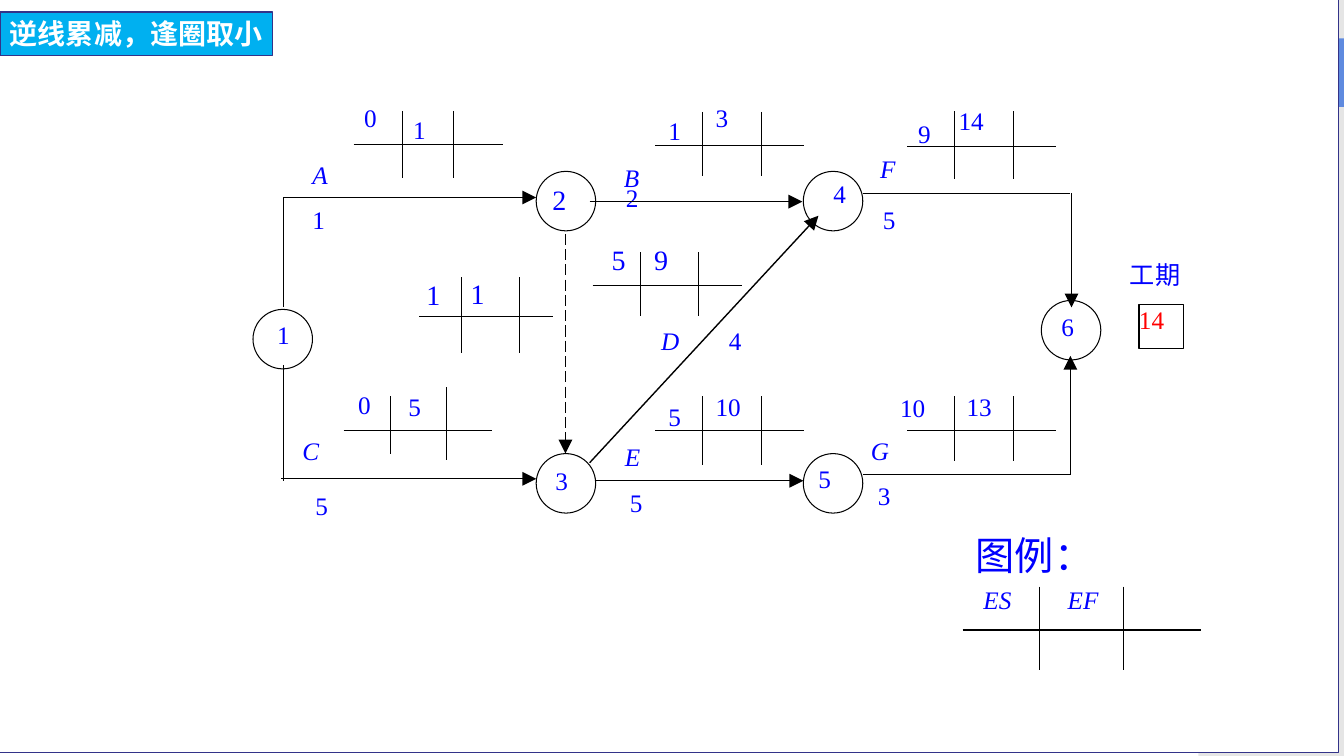
from collections import namedtuple
from dataclasses import dataclass

from lxml.etree import SubElement
from pptx import Presentation
from pptx.dml.color import RGBColor
from pptx.enum.dml import MSO_LINE
from pptx.enum.shapes import MSO_CONNECTOR, MSO_SHAPE
from pptx.enum.text import MSO_ANCHOR
from pptx.oxml.ns import qn
from pptx.util import Pt


@dataclass(frozen=True)
class Theme:
    """Colours, fonts and sizes of the slide."""
    ink: str = "000000"
    value: str = "0000FF"
    result: str = "FF0000"
    paper: str = "FFFFFF"
    border: str = "333389"
    banner: str = "00B0F0"
    strip: str = "C0C0C0"
    accent: str = "5F8ADF"
    latin: str = "Times New Roman"
    chinese: str = "Noto Sans CJK SC"
    body: int = 18
    large: int = 20
    heading: int = 28
    thin: float = 0.75
    arrow: float = 1


THEME = Theme()
Box = namedtuple("Box", "left top width height")
Grid = namedtuple("Grid", "left rule width dividers entries size", defaults=[THEME.body])

NODE_DIAMETER = 42.5
NODES = [
    ("1", 0.7, 149, 17.3, 7.2, THEME.body),
    ("2", 203, 50.4, 11.6, 7.9, THEME.large),
    ("3", 203, 252, 13.7, 8.6, THEME.body),
    ("4", 393.8, 50.4, 21.6, 5, THEME.body),
    ("5", 393.8, 252, 10.8, 7.2, THEME.body),
    ("6", 563.8, 142.6, 14.4, 7.9, THEME.body),
]
PLAIN_LINES = [
    (22.3, 69.1, 22.3, 147.6),
    (22.3, 188.6, 22.3, 271.4),
    (436.3, 66.2, 584.6, 66.2),
    (436.3, 267.1, 584.6, 267.1),
]
ARROWS = [
    (22.3, 69.1, 203, 69.1),
    (20.9, 270, 203, 270),
    (241.2, 72, 393.1, 72),
    (245.5, 271.4, 393.8, 271.4),
    (241.2, 258.5, 404.6, 82.1),
    (585.4, 66.2, 585.4, 147.6),
    (584.6, 267.1, 584.6, 182.2),
]
DUMMY_ARROW = (223.9, 95, 223.9, 252)
ACTIVITIES = [
    ("A", 43.2, 41.8, "1", 43.2, 74.2),
    ("B", 265.7, 43.9, "2", 267.1, 58.3),
    ("C", 36, 239, "5", 45.2, 277.9),
    ("D", 292.3, 160.6, "4", 340.6, 160.6),
    ("E", 266.4, 243.4, "5", 270, 275.8),
    ("F", 448.6, 37.4, "5", 450.7, 74.2),
    ("G", 442.1, 239, "3", 447.1, 271.4),
]


def pair(first, second, up, down):
    """Return two dividers that share the same reach above and below the rule."""
    return (first, up, down), (second, up, down)


GRIDS = [
    Grid(72.7, 31, 106.5, pair(34.6, 71.3, 23.8, 24.4), [("0", 7.4, -29.6), ("1", 42.5, -21.6)]),
    Grid(288, 31.7, 106.5, pair(33.8, 75.6, 23.8, 22.3), [("1", 9.4, -21.6), ("3", 43.2, -30.3)]),
    Grid(468, 32.4, 106.5, pair(33.8, 75.6, 24.8, 23.8), [("9", 7.9, -20.2), ("14", 36.7, -29.5)]),
    Grid(119.5, 154, 95.8, pair(30.3, 71.3, 28, 26), [("1", 5.1, -28), ("1", 36.7, -28.7)],
         THEME.large),
    Grid(243.4, 131.8, 106.5, pair(33.8, 75.6, 23.8, 22.2), [("5", 13.6, -30.3), ("9", 43.9, -30.3)],
         THEME.large),
    Grid(65.5, 235.4, 106, ((33.1, 24.4, 16.6), (73.5, 30.9, 20.9)),
         [("0", 10.3, -29.5), ("5", 46.3, -28)]),
    Grid(288, 235.4, 106.5, pair(33.8, 75.6, 24.4, 24.5), [("5", 9.4, -20.8), ("10", 43.2, -28)]),
    Grid(468, 235.4, 106.5, pair(33.8, 75.6, 24.4, 21.6), [("10", -5, -27.3), ("13", 42.5, -28)]),
]
LEGEND_GRID = Grid(0, 70.6, 170, pair(54.7, 115.2, 31, 28.8), [("ES", 14.9, -32.4), ("EF", 75.1, -32.4)])


def write(shape, text, size=THEME.body, color=THEME.value, font=THEME.latin, bold=False, italic=False):
    """Fill a shape with one formatted line of text, without margins."""
    frame = shape.text_frame
    frame.text = text
    frame.word_wrap = True
    frame.vertical_anchor = MSO_ANCHOR.TOP
    frame.margin_left = frame.margin_right = frame.margin_top = frame.margin_bottom = 0
    paragraph = frame.paragraphs[0]
    paragraph.alignment = 1
    for run in paragraph.runs:
        run.font.size, run.font.name = Pt(size), font
        run.font.bold, run.font.italic = bold, italic
        run.font.color.rgb = RGBColor.from_string(color)
        SubElement(run.font._element, qn("a:ea"), typeface=THEME.chinese)


def add_label(slide, text, left, top, width=None, **style):
    """Add a text box whose width follows its number of characters."""
    width = width or (21.6 if len(text) == 1 else 30)
    write(slide.shapes.add_textbox(Pt(left), Pt(top), Pt(width), Pt(31)), text, **style)


def add_panel(slide, box, fill=None, line=None, kind=MSO_SHAPE.RECTANGLE):
    """Add a preset shape with an optional fill and outline."""
    shape = slide.shapes.add_shape(kind, *map(Pt, box))
    shape.shadow.inherit = False
    if fill:
        shape.fill.solid()
        shape.fill.fore_color.rgb = RGBColor.from_string(fill)
    else:
        shape.fill.background()
    if line:
        shape.line.color.rgb = RGBColor.from_string(line)
        shape.line.width = Pt(THEME.thin)
    else:
        shape.line.fill.background()
    return shape


def add_line(slide, box, ends, arrow=False, dashed=False):
    """Add a straight line between two points of a box."""
    x1, y1, x2, y2 = ends
    connector = slide.shapes.add_connector(
        MSO_CONNECTOR.STRAIGHT, Pt(box.left + x1), Pt(box.top + y1), Pt(box.left + x2), Pt(box.top + y2))
    connector.line.color.rgb = RGBColor.from_string(THEME.ink)
    connector.line.width = Pt(THEME.arrow if arrow else THEME.thin)
    if dashed:
        connector.line.dash_style = MSO_LINE.LONG_DASH
    if arrow:
        SubElement(connector.line._get_or_add_ln(), qn("a:tailEnd"), type="triangle", w="lg", len="lg")
    SubElement(connector._element.spPr, qn("a:effectLst"))


def add_time_grid(slide, box, grid, italic=False):
    """Draw the rule, dividers and times of one activity."""
    origin = Box(box.left + grid.left, box.top + grid.rule, grid.width, 0)
    add_line(slide, origin, (0, 0, grid.width, 0))
    for x, up, down in grid.dividers:
        add_line(slide, origin, (x, -up, x, down))
    for text, x, y in grid.entries:
        add_label(slide, text, origin.left + x, origin.top + y, size=grid.size, italic=italic)


def add_backdrop(slide, box):
    """Draw the side strip and the framed white page over it."""
    strip_left = box.left + box.width - 104
    strip = add_panel(slide, Box(strip_left, box.top, 104, box.height), THEME.strip)
    SubElement(strip.fill._xPr.find(".//" + qn("a:srgbClr")), qn("a:alpha"), val="40000")
    add_panel(slide, Box(strip_left, box.top + 27.4, 104, 49), THEME.accent)
    add_panel(slide, Box(box.left - 2.2, box.top, 958.3, 537.8), THEME.paper, THEME.border)


def add_banner(slide, box):
    """Draw the heading banner."""
    banner = add_panel(slide, box, THEME.banner, THEME.border)
    write(banner, "逆线累减，逢圈取小", THEME.large, THEME.paper, THEME.chinese, bold=True)
    banner.text_frame.margin_left = Pt(7.2)
    banner.text_frame.vertical_anchor = MSO_ANCHOR.MIDDLE


def add_network(slide, box):
    """Draw the activity network with its times."""
    for grid in GRIDS:
        add_time_grid(slide, box, grid)
    for name, name_x, name_y, duration, x, y in ACTIVITIES:
        add_label(slide, name, box.left + name_x, box.top + name_y, italic=True)
        add_label(slide, duration, box.left + x, box.top + y)
    for number, x, y, text_x, text_y, size in NODES:
        circle = Box(box.left + x, box.top + y, NODE_DIAMETER, NODE_DIAMETER)
        add_panel(slide, circle, line=THEME.ink, kind=MSO_SHAPE.OVAL)
        add_label(slide, number, circle.left + text_x, circle.top + text_y, size=size)
    for ends in PLAIN_LINES:
        add_line(slide, box, ends)
    for ends in ARROWS:
        add_line(slide, box, ends, arrow=True)
    add_line(slide, box, DUMMY_ARROW, arrow=True, dashed=True)


def add_duration(slide, box):
    """Draw the total duration and its caption."""
    add_label(slide, "工期", box.left, box.top, box.width)
    result = add_panel(slide, Box(box.left + 6.5, box.top + 32.4, 31.7, 31.7), line=THEME.ink)
    write(result, "14", color=THEME.result)


def add_legend(slide, box):
    """Draw the legend heading and its sample grid."""
    add_label(slide, "图例：", box.left + 9.4, box.top, 120, size=THEME.heading)
    add_time_grid(slide, box, LEGEND_GRID, italic=True)


def main():
    """Build and save the slide."""
    presentation = Presentation()
    presentation.slide_width, presentation.slide_height = Pt(960), Pt(540)
    slide = presentation.slides.add_slide(presentation.slide_layouts[6])
    add_backdrop(slide, Box(0, 0, 960, 540))
    add_network(slide, Box(180, 72, 607, 295))
    add_duration(slide, Box(807.1, 185, 53.3, 64))
    add_legend(slide, Box(687.6, 379.4, 170, 100))
    add_banner(slide, Box(0, 8.6, 195, 31))
    presentation.save("out.pptx")


if __name__ == "__main__":
    main()
